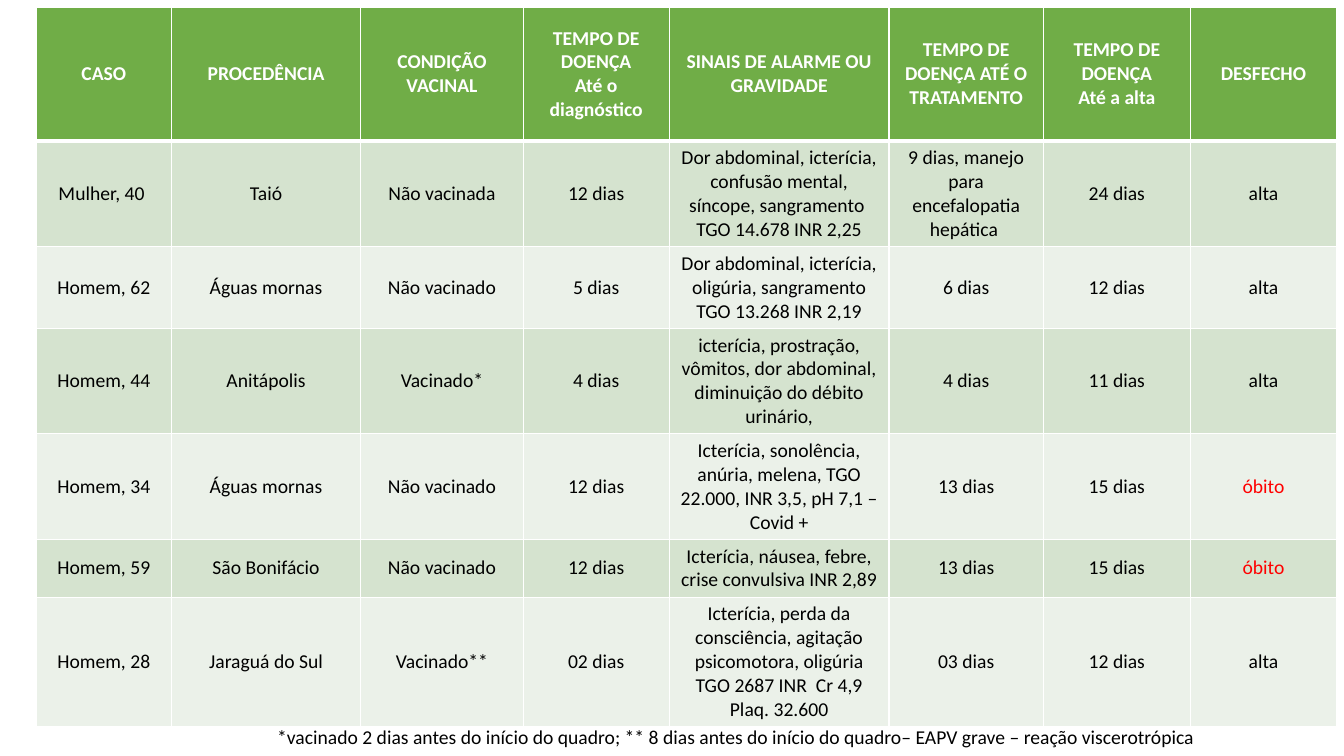
from lxml.etree import SubElement
from pptx import Presentation
from pptx.dml.color import RGBColor
from pptx.enum.text import MSO_ANCHOR, PP_ALIGN
from pptx.oxml.ns import qn
from pptx.util import Pt

WHITE = RGBColor(0xFF, 0xFF, 0xFF)
BLACK = RGBColor(0, 0, 0)
RED = RGBColor(0xFF, 0, 0)
GREEN = RGBColor(0x70, 0xAD, 0x47)
BANDS = [RGBColor(0xD5, 0xE3, 0xCF), RGBColor(0xEB, 0xF1, 0xE9)]

WIDTHS = [96.5, 135.4, 115.9, 104.4, 157, 110.2, 105.1, 104.4]
HEAD_ROW, CASE_ROW = 95.8, 34
CASES = [
    ["CASO", "PROCEDÊNCIA", "CONDIÇÃO VACINAL",
     "TEMPO DE DOENÇA\nAté o diagnóstico", "SINAIS DE ALARME OU GRAVIDADE",
     "TEMPO DE DOENÇA ATÉ O TRATAMENTO", "TEMPO DE DOENÇA\nAté a alta",
     "DESFECHO"],
    ["Mulher, 40 ", "Taió", "Não vacinada", "12 dias",
     "Dor abdominal, icterícia, confusão mental, síncope, sangramento \n"
     "TGO 14.678 INR 2,25",
     "9 dias, manejo para encefalopatia hepática ", "24 dias", "alta"],
    ["Homem, 62", "Águas mornas", "Não vacinado", "5 dias",
     "Dor abdominal, icterícia, oligúria, sangramento\nTGO 13.268 INR 2,19",
     "6 dias", "12 dias", "alta"],
    ["Homem, 44", "Anitápolis", "Vacinado*", "4 dias",
     "icterícia, prostração, vômitos, dor abdominal, diminuição do débito "
     "urinário,",
     "4 dias", "11 dias", "alta"],
    ["Homem, 34", "Águas mornas", "Não vacinado", "12 dias",
     "Icterícia, sonolência, anúria, melena, TGO 22.000, INR 3,5, pH 7,1 – "
     "Covid +",
     "13 dias", "15 dias", "óbito"],
    ["Homem, 59", "São Bonifácio", "Não vacinado", "12 dias",
     "Icterícia, náusea, febre, crise convulsiva INR 2,89",
     "13 dias", "15 dias", "óbito"],
    ["Homem, 28", "Jaraguá do Sul", "Vacinado**", "02 dias",
     "Icterícia, perda da consciência, agitação psicomotora, oligúria "
     "TGO 2687 INR  Cr 4,9 Plaq. 32.600",
     "03 dias", "12 dias", "alta"],
]
NOTE = ("*vacinado 2 dias antes do início do quadro; ** 8 dias antes do "
        "início do quadro– EAPV grave – reação viscerotrópica")


class Board:
    def __init__(self, slide):
        self.slide = slide
        self.style = {"name": "Calibri", "size": Pt(14)}

    def text(self, frame, words, color, align=PP_ALIGN.LEFT, bold=False):
        frame.text = words
        for para in frame.paragraphs:
            para.alignment = align
            for run in para.runs:
                for key, value in {**self.style, "bold": bold}.items():
                    setattr(run.font, key, value)
                run.font.color.rgb = color

    def edge(self, cell, base):
        """Draw white cell borders, the lower one as wide as base."""
        props = cell._tc.get_or_add_tcPr()
        sides = {"a:lnL": 1, "a:lnR": 1, "a:lnT": 1, "a:lnB": base}
        for spot, (tag, width) in enumerate(sides.items()):
            line = SubElement(props, qn(tag), w=str(Pt(width)))
            fill = SubElement(line, qn("a:solidFill"))
            SubElement(fill, qn("a:srgbClr"), val=str(WHITE))
            props.insert(spot, line)

    def table(self, left, top, height, rows):
        shape = self.slide.shapes.add_table(
            len(rows), len(WIDTHS), Pt(left), Pt(top), Pt(sum(WIDTHS)),
            Pt(height))
        grid = shape.table
        for col, width in zip(grid.columns, WIDTHS):
            col.width = Pt(width)
        for i, texts in enumerate(rows):
            head = i == 0
            grid.rows[i].height = Pt(HEAD_ROW if head else CASE_ROW)
            for j, words in enumerate(texts):
                cell = grid.cell(i, j)
                cell.vertical_anchor = MSO_ANCHOR.MIDDLE
                cell.fill.solid()
                cell.fill.fore_color.rgb = GREEN if head else BANDS[(i - 1) % 2]
                color = WHITE if head else RED if words == "óbito" else BLACK
                self.text(cell.text_frame, words, color, PP_ALIGN.CENTER, head)
                self.edge(cell, 3 if head else 1)
        shape.height = Pt(height)

    def label(self, left, top, width, height, words):
        box = self.slide.shapes.add_textbox(
            Pt(left), Pt(top), Pt(width), Pt(height))
        box.text_frame.word_wrap = True
        self.text(box.text_frame, words, BLACK)


def main():
    deck = Presentation()
    deck.slide_width, deck.slide_height = Pt(960), Pt(540)
    board = Board(deck.slides.add_slide(deck.slide_layouts[6]))
    board.table(25.9, 5, 508.3, CASES)
    board.label(190.8, 514.1, 682.6, 24.5, NOTE)
    deck.save("out.pptx")


if __name__ == "__main__":
    main()
